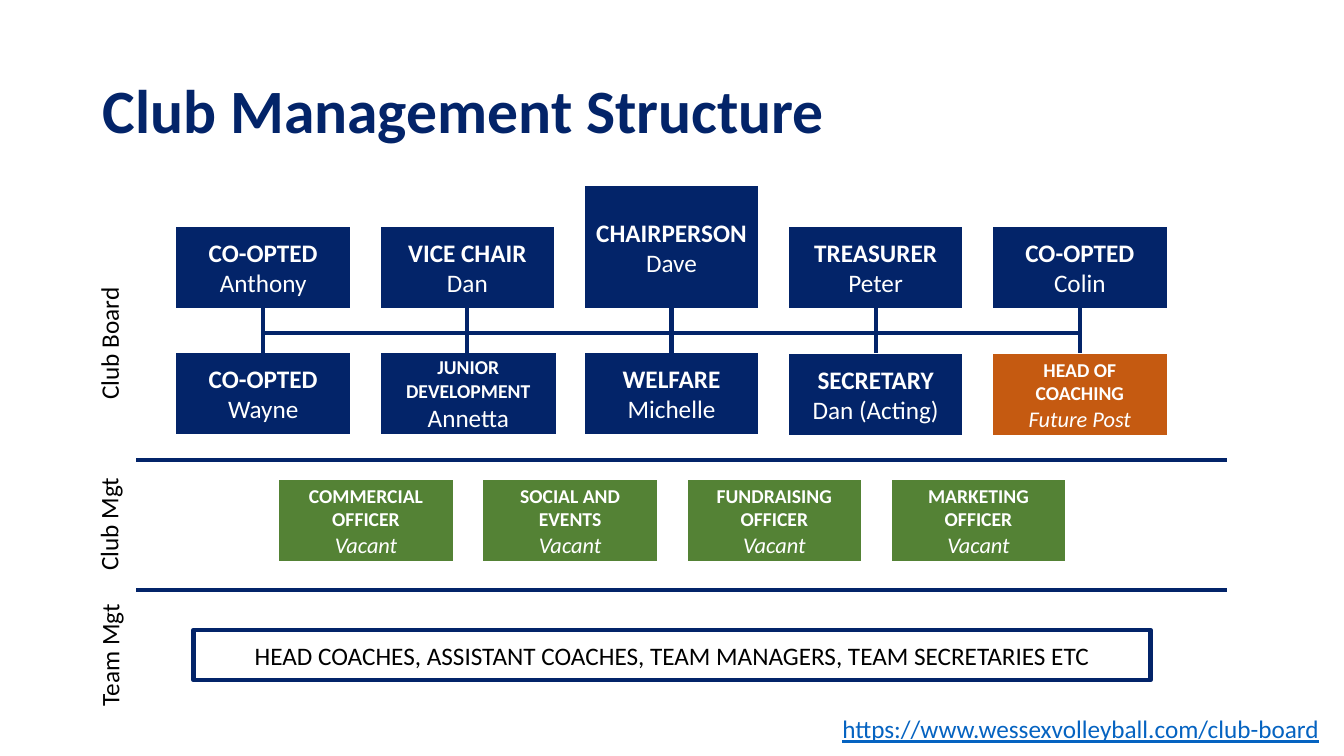
from dataclasses import dataclass

from lxml import etree
from pptx import Presentation
from pptx.dml.color import RGBColor as RGB
from pptx.enum.shapes import MSO_CONNECTOR as CONN, MSO_SHAPE as SHAPE
from pptx.enum.text import MSO_ANCHOR as ANCHOR, PP_ALIGN as ALIGN
from pptx.oxml.ns import qn
from pptx.util import Inches, Pt


@dataclass(frozen=True)
class Theme:
    font: str = "Calibri"
    navy: str = "032469"
    orange: str = "C55A11"
    green: str = "548235"
    link: str = "0563C1"
    white: str = "FFFFFF"
    black: str = "000000"
    title: int = 44
    body: int = 18
    status: int = 16
    small: int = 14
    rule: int = 3


def write(p, text, size, color, font, bold=False, italic=False, underline=False,
          align=ALIGN.CENTER, spacing=None):
    p.alignment = align
    if spacing:
        p.line_spacing = spacing
    r = p.add_run()
    r.text = text
    f = r.font
    f.name, f.size, f.color.rgb = font, Pt(size), RGB.from_string(color)
    f.bold, f.italic, f.underline = bold, italic, underline


class Board:
    def __init__(self, slide, theme):
        self.slide, self.theme = slide, theme

    def text(self, text, x, y, w, h, rotation=0, anchor=ANCHOR.TOP, **fmt):
        t = self.theme
        sp = self.slide.shapes.add_textbox(*map(Inches, (x, y, w, h)))
        sp.rotation = rotation
        tf = sp.text_frame
        tf.word_wrap, tf.vertical_anchor = True, anchor
        write(tf.paragraphs[0], text,
              **{"size": t.body, "color": t.black, "font": t.font, **fmt})

    def box(self, x, y, w, h, lines, fill=None, wrap=True):
        """Draw a process box; lines is a list of (text, format) pairs."""
        t = self.theme
        sp = self.slide.shapes.add_shape(SHAPE.FLOWCHART_PROCESS,
                                         *map(Inches, (x, y, w, h)))
        sp.shadow.inherit = False
        if fill:
            sp.fill.solid()
            sp.fill.fore_color.rgb = RGB.from_string(fill)
            sp.line.fill.background()
        else:
            sp.fill.background()
            sp.line.color.rgb = RGB.from_string(t.navy)
            sp.line.width = Pt(t.rule)
        tf = sp.text_frame
        tf.word_wrap, tf.vertical_anchor = wrap, ANCHOR.MIDDLE
        for i, (text, fmt) in enumerate(lines):
            p = tf.add_paragraph() if i else tf.paragraphs[0]
            write(p, text, **{"size": t.body, "font": t.font,
                              "color": t.white if fill else t.black, **fmt})

    def post(self, x, y, role, holder, w=1.72, h=0.81, fill=None, small=False,
             vacant=False, wrap=True):
        t = self.theme
        role_fmt = {"bold": True, "size": t.small if small else t.body}
        holder_fmt = {"italic": True, "size": t.status} if vacant else {}
        self.box(x, y, w, h, [(role, role_fmt), (holder, holder_fmt)],
                 fill or t.navy, wrap)

    def line(self, x1, y1, x2, y2):
        c = self.slide.shapes.add_connector(CONN.STRAIGHT,
                                            *map(Inches, (x1, y1, x2, y2)))
        c.line.color.rgb = RGB.from_string(self.theme.navy)
        c.line.width = Pt(self.theme.rule)
        etree.SubElement(c._element.spPr, qn("a:effectLst"))


def main():
    prs = Presentation()
    prs.slide_width, prs.slide_height = Inches(13.33), Inches(7.5)
    theme = Theme()
    board = Board(prs.slides.add_slide(prs.slide_layouts[6]), theme)

    board.text("Club Management Structure", 0.92, 0.4, 11.5, 1.45,
               anchor=ANCHOR.MIDDLE, size=theme.title, color=theme.navy,
               bold=True, align=ALIGN.LEFT, spacing=0.9)

    left, pitch, half = 1.75, 2.025, 0.86
    upper_y, lower_y, bottom = 2.25, 3.5, 3.06
    columns = [left + i * pitch for i in range(5)]

    board.line(columns[0] + half, 3.3, columns[-1] + half, 3.3)
    for x in columns:
        board.line(x + half, bottom, x + half, lower_y)

    upper_posts = [
        ("CO-OPTED", "Anthony", {}),
        ("VICE CHAIR", "Dan", {}),
        ("CHAIRPERSON", "Dave", {"y": 1.85, "h": 1.21, "wrap": False}),
        ("TREASURER", "Peter", {}),
        ("CO-OPTED", "Colin", {}),
    ]
    lower_posts = [
        ("CO-OPTED", "Wayne", {}),
        ("JUNIOR DEVELOPMENT", "Annetta", {"w": 1.74, "small": True}),
        ("WELFARE", "Michelle", {}),
        ("SECRETARY", "Dan (Acting)", {"y": 3.51}),
        ("HEAD OF COACHING", "Future Post",
         {"y": 3.51, "fill": theme.orange, "small": True, "vacant": True}),
    ]
    for y, posts in ((upper_y, upper_posts), (lower_y, lower_posts)):
        for x, (role, holder, options) in zip(columns, posts):
            board.post(**{"x": x, "y": y, "role": role, "holder": holder, **options})

    officers = ["COMMERCIAL OFFICER", "SOCIAL AND EVENTS",
                "FUNDRAISING OFFICER", "MARKETING OFFICER"]
    for i, role in enumerate(officers):
        board.post(2.77 + i * pitch, 4.76, role, "Vacant", fill=theme.green,
                   small=True, vacant=True)

    board.box(1.92, 6.25, 9.49, 0.5,
              [("HEAD COACHES, ASSISTANT COACHES, TEAM MANAGERS, TEAM SECRETARIES ETC", {})])

    for y in (4.56, 5.85):
        board.line(1.35, y, 12.17, y)

    for label, x, y, w in (("Club Board", -0.07, 3.21, 2.3),
                           ("Club Mgt", 0.43, 5, 1.29),
                           ("Team Mgt", 0.43, 6.3, 1.31)):
        board.text(label, x, y, w, 0.4, rotation=270)

    board.text("https://www.wessexvolleyball.com/club-board", 7.15, 7.03, 6.03, 0.4,
               color=theme.link, underline=True, align=ALIGN.RIGHT)

    prs.save("out.pptx")


if __name__ == "__main__":
    main()
